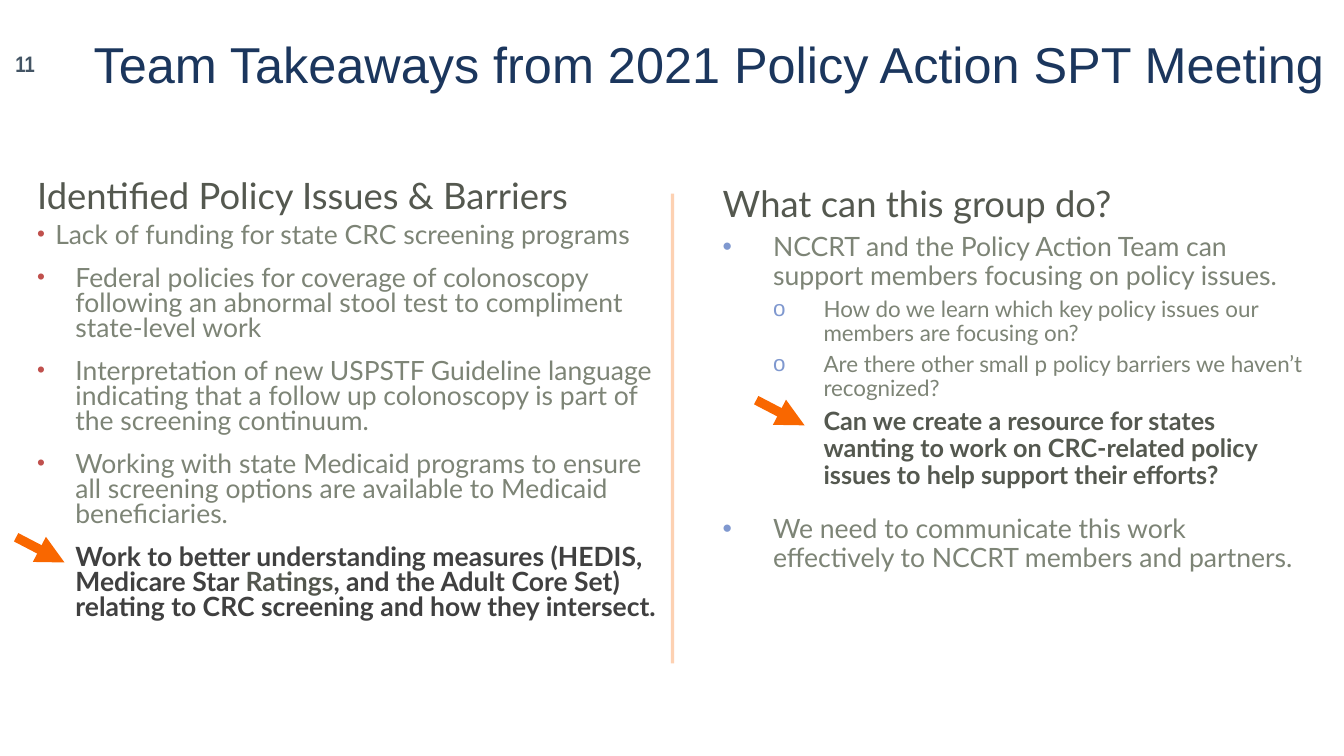
from dataclasses import dataclass

from lxml import etree
from pptx import Presentation
from pptx import util as u
from pptx.dml import color
from pptx.enum import shapes, text
from pptx.oxml import ns


@dataclass(frozen=True)
class Theme:
    title_font: str = "Arial"
    number_font: str = "Arial Narrow"
    body_font: str = "Lato"
    navy: str = "1B365D"
    slate: str = "435464"
    heading: str = "54584F"
    body: str = "7D8476"
    dark: str = "404040"
    orange: str = "F96700"
    red_bullet: str = "C0504D"
    blue_bullet: str = "7F98CF"
    title_size: float = 36
    number_size: float = 16
    heading_size: float = 26
    issue_size: float = 18.9
    action_size: float = 19
    question_size: float = 16
    resource_size: float = 18


THEME = Theme()


def apply(target, values):
    for name, value in values.items():
        setattr(target, name, value)


def add_xml(parent, tag, **attributes):
    return etree.SubElement(parent, ns.qn(tag), attributes)


def style(size, rgb, font=THEME.body_font, bold=False):
    return {"size": size, "color": rgb, "name": font, "bold": bold}


def add_run(paragraph, words, look):
    run = paragraph.add_run()
    run.text = words
    apply(run.font, {"size": u.Pt(look["size"]), "name": look["name"], "bold": look["bold"]})
    run.font.color.rgb = color.RGBColor.from_string(look["color"])


def add_paragraph(frame, runs, layout=None, margin=0, bullet=None):
    """Add styled runs; bullet is (character, colour, size percent, hang)."""
    first = frame.paragraphs[0]
    paragraph = frame.add_paragraph() if first.runs else first
    properties = paragraph._p.get_or_add_pPr()
    properties.set("marL", str(u.Inches(margin)))
    properties.set("indent", "0")
    if bullet:
        character, rgb, percent, hang = bullet
        properties.set("indent", str(-u.Inches(hang)))
        add_xml(add_xml(properties, "a:buClr"), "a:srgbClr", val=rgb)
        add_xml(properties, "a:buSzPct", val=str(percent * 1000))
        add_xml(properties, "a:buFont", typeface=THEME.title_font)
        add_xml(properties, "a:buChar", char=character)
    apply(paragraph, layout or {})
    for words, look in runs:
        add_run(paragraph, words, look)


def add_text_box(slide, left, top, width, height, anchor=text.MSO_ANCHOR.TOP):
    box = slide.shapes.add_textbox(*map(u.Inches, (left, top, width, height)))
    apply(box.text_frame, {"word_wrap": True, "vertical_anchor": anchor})
    return box.text_frame


def add_line(slide, start, end, width, alpha=None, arrow=False):
    points = map(u.Inches, (*start, *end))
    connector = slide.shapes.add_connector(shapes.MSO_CONNECTOR.STRAIGHT, *points)
    connector.line.width = u.Pt(width)
    connector.line.color.rgb = color.RGBColor.from_string(THEME.orange)
    line = connector.line._ln
    if alpha:
        add_xml(line.find(".//" + ns.qn("a:srgbClr")), "a:alpha", val=str(alpha * 1000))
    if arrow:
        add_xml(line, "a:tailEnd", type="triangle")
    add_xml(connector._element.spPr, "a:effectLst")


def add_header(slide):
    middle = text.MSO_ANCHOR.MIDDLE
    title = add_text_box(slide, 0.83, 0, 12.5, 1.25, middle)
    add_paragraph(title, [("Team Takeaways from 2021 Policy Action SPT Meeting",
                           style(THEME.title_size, THEME.navy, THEME.title_font))])
    number = add_text_box(slide, 0, 0.42, 0.5, 0.42, middle)
    add_paragraph(number, [("11", style(THEME.number_size, THEME.slate, THEME.number_font, True))],
                  {"alignment": text.PP_ALIGN.CENTER})


def add_issues(slide):
    frame = add_text_box(slide, 0.27, 1.75, 6.4, 5.33)
    add_paragraph(frame, [("Identified Policy Issues & Barriers",
                           style(THEME.heading_size, THEME.heading))], {"line_spacing": 0.8})
    plain = style(THEME.issue_size, THEME.body)
    spacing = {"line_spacing": 0.8, "space_after": u.Pt(12)}
    issues = [
        ("Lack of funding for state CRC screening programs", 0.18, 6),
        ("Federal policies for coverage of colonoscopy following an abnormal stool test "
         "to compliment state-level work", 0.38, 0),
        ("Interpretation of new USPSTF Guideline language indicating that a follow up "
         "colonoscopy is part of the screening continuum.", 0.38, 0),
        ("Working with state Medicaid programs to ensure all screening options are "
         "available to Medicaid beneficiaries.", 0.38, 0),
    ]
    for words, margin, before in issues:
        add_paragraph(frame, [(words, plain)], {**spacing, "space_before": u.Pt(before)},
                      margin, ("•", THEME.red_bullet, 85, margin))
    strong = style(THEME.issue_size, THEME.dark, bold=True)
    add_paragraph(frame, [
        ("Work to better understanding measures (HEDIS, Medicare Star ", strong),
        ("Ratings", {**strong, "color": THEME.heading}),
        (", and the Adult Core Set) relating to CRC screening and how they intersect.", strong),
    ], spacing, 0.38)


def add_actions(slide):
    frame = add_text_box(slide, 7.07, 1.75, 6, 4.22)
    add_paragraph(frame, [("What can this group do?",
                           style(THEME.heading_size, THEME.heading))])
    action = style(THEME.action_size, THEME.body)
    question = style(THEME.question_size, THEME.body)
    resource = style(THEME.resource_size, THEME.heading, bold=True)
    dot = ("•", THEME.blue_bullet, 100, 0.5)
    ring = ("o", THEME.blue_bullet, 100, 0.5)
    # Words, look, level, space before, bullet
    items = [
        ("NCCRT and the Policy Action Team can support members focusing on policy issues.",
         action, 0, 6, dot),
        ("How do we learn which key policy issues our members are focusing on?",
         question, 1, 5, ring),
        ("Are there other small p policy barriers we haven’t recognized?",
         question, 1, 5, ring),
        ("Can we create a resource for states wanting to work on CRC-related policy "
         "issues to help support their efforts?", resource, 1, 5, None),
        ("We need to communicate this work effectively to NCCRT members and partners.",
         action, 0, 18, dot),
    ]
    for words, look, level, before, bullet in items:
        layout = {"level": level, "line_spacing": 0.9, "space_before": u.Pt(before)}
        add_paragraph(frame, [(words, look)], layout, 0.5 * (level + 1), bullet)


def main():
    presentation = Presentation()
    apply(presentation, {"slide_width": u.Inches(13.33), "slide_height": u.Inches(7.5)})
    slide = presentation.slides.add_slide(presentation.slide_layouts[6])

    # Text
    add_header(slide)
    add_issues(slide)
    add_actions(slide)

    # Column divider and the arrows at the two highlighted points
    add_line(slide, (6.67, 1.92), (6.67, 6.58), 2.25, alpha=30)
    for left, top in ((0.16, 5.33), (7.5, 3.97)):
        add_line(slide, (left, top), (left + 0.48, top + 0.25), 6.75, arrow=True)

    presentation.save("out.pptx")


if __name__ == "__main__":
    main()
